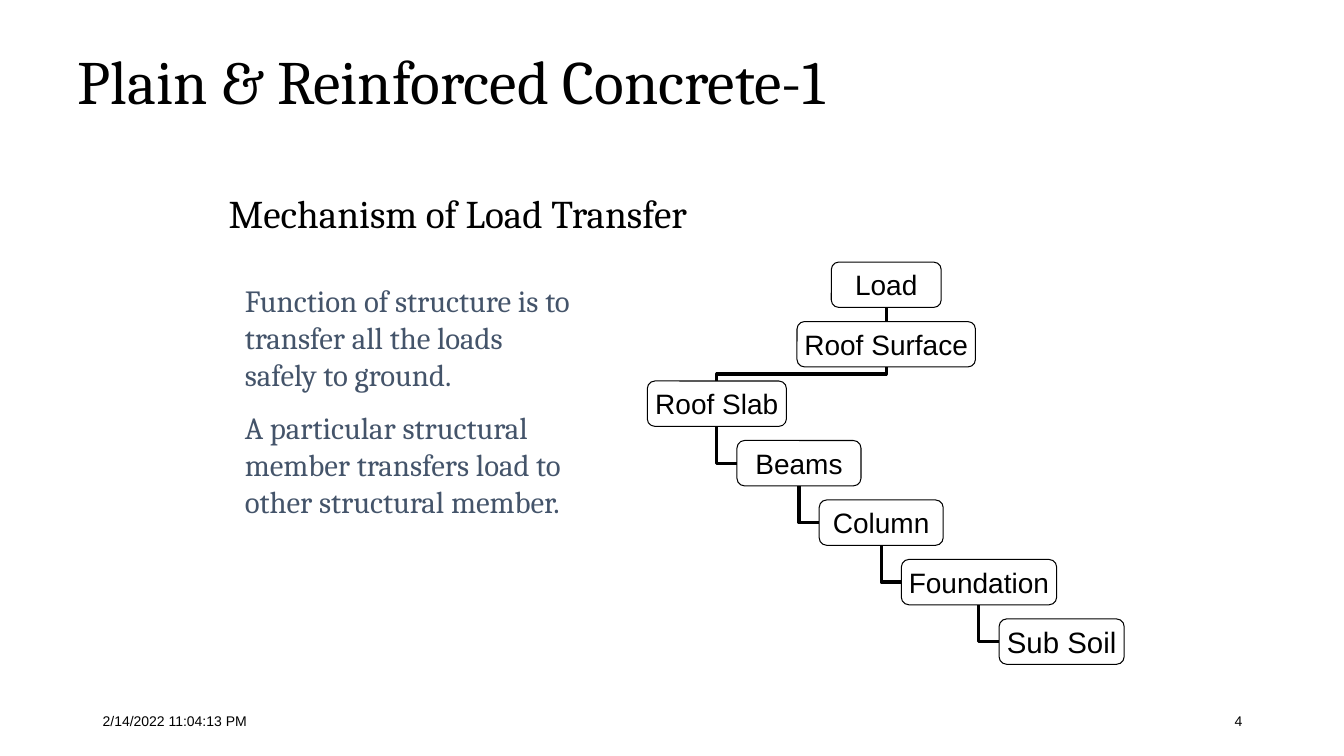
from dataclasses import dataclass
from lxml.etree import SubElement
from pptx import Presentation
from pptx.dml.color import RGBColor as RGB
from pptx.enum.shapes import MSO_CONNECTOR as CONN, MSO_SHAPE as SHAPE
from pptx.enum.text import MSO_ANCHOR as ANCHOR, PP_ALIGN as ALIGN
from pptx.oxml.ns import qn
from pptx.util import Inches as In, Pt


@dataclass(frozen=True)
class Theme:
    ink: RGB = RGB(0, 0, 0)
    slate: RGB = RGB(0x44, 0x54, 0x6A)
    serif: str = "Cambria"
    sans: str = "Arial"
    title: int = 44
    heading: int = 28
    body: int = 22
    node: int = 20
    last_node: int = 21
    footer: int = 10


T = Theme()


def write(sp, lines, font, size, color, align=ALIGN.LEFT, anchor=ANCHOR.TOP,
          wrap=True, before=0, spacing=1.0):
    """Fill a shape with paragraphs of one style."""
    tf = sp.text_frame
    tf.word_wrap, tf.vertical_anchor = wrap, anchor
    tf.text = "\n".join(lines)
    for p in tf.paragraphs:
        p.font.name, p.font.size, p.font.color.rgb = font, Pt(size), color
        p.alignment, p.line_spacing, p.space_before = align, spacing, Pt(before)


def link(s, kind, child, child_site, parent):
    """Glue a line from a side of the child to the bottom of the parent."""
    c = s.shapes.add_connector(kind, 0, 0, 0, 0)
    c.begin_connect(child, child_site)
    c.end_connect(parent, BOTTOM)
    c.line.color.rgb, c.line.width = T.ink, Pt(2.25)
    SubElement(c._element.spPr, qn("a:effectLst"))
    return c


prs = Presentation()
prs.slide_width, prs.slide_height = In(13.33), In(7.5)
s = prs.slides.add_slide(prs.slide_layouts[5])

# Title
title = s.shapes.title
title.left, title.top, title.width, title.height = In(0.67), In(0.13), In(11), In(1.42)
write(title, ["Plain & Reinforced Concrete-1"], T.serif, T.title, T.ink,
      anchor=ANCHOR.MIDDLE, spacing=0.9)

# Heading and explanation
heading = s.shapes.add_textbox(In(2.17), In(1.88), In(5.42), In(0.79))
write(heading, ["Mechanism of Load Transfer"], T.serif, T.heading, T.ink,
      before=10, spacing=0.9)
body = s.shapes.add_textbox(In(2.33), In(2.75), In(3.5), In(2.88))
write(body, ["Function of structure is to transfer all the loads safely to ground.",
             "A particular structural member transfers load to other structural member."],
      T.serif, T.body, T.slate, before=11)

# Load path: two centred boxes, then a staircase
TOP, LEFT, BOTTOM = 0, 1, 2
ROW_TOP, ROW_PITCH, BOX_H = 2.6, 0.59, 0.45
AXIS, SLAB_LEFT, STEP = 8.79, 6.42, 0.2
members = [("Load", 1.09), ("Roof Surface", 1.77), ("Roof Slab", 1.38), ("Beams", 1.23),
           ("Column", 1.23), ("Foundation", 1.54), ("Sub Soil", 1.24)]
boxes = []
x = SLAB_LEFT
for row, (name, width) in enumerate(members):
    left = AXIS - width / 2 if row < 2 else x
    sp = s.shapes.add_shape(SHAPE.ROUNDED_RECTANGLE, In(left), In(ROW_TOP + row * ROW_PITCH),
                            In(width), In(BOX_H))
    sp.shadow.inherit = False
    sp.fill.background()
    sp.line.color.rgb, sp.line.width = T.ink, Pt(0.75)
    tf = sp.text_frame
    tf.margin_left = tf.margin_right = In(0.05)
    tf.margin_top = tf.margin_bottom = In(0.03)
    size = T.last_node if row == len(members) - 1 else T.node
    write(sp, [name], T.sans, size, T.ink, ALIGN.CENTER, ANCHOR.MIDDLE, wrap=False)
    boxes.append(sp)
    if row >= 2:
        x += width / 2 + STEP

# Straight line from load to roof surface
load, surface, slab = boxes[:3]
link(s, CONN.STRAIGHT, surface, TOP, load)

# Two-bend line from roof surface to slab, turned upright
c = link(s, CONN.ELBOW, slab, TOP, surface)
mid_x, mid_y = c.left + c.width // 2, c.top + c.height // 2
c.width, c.height = c.height, c.width
c.left, c.top = mid_x - c.width // 2, mid_y - c.height // 2
xfrm = c._element.spPr.find(qn("a:xfrm"))
xfrm.set("rot", str(270 * 60000))
xfrm.set("flipV", "0")

# One-bend lines down the staircase
for parent, child in zip(boxes[2:], boxes[3:]):
    c = link(s, CONN.ELBOW, child, LEFT, parent)
    c._element.spPr.find(qn("a:prstGeom")).set("prst", "bentConnector2")

# Footer: date and slide number
for left, text, align in [(0.92, "2/14/2022 11:04:13 PM", ALIGN.LEFT), (9.42, "4", ALIGN.RIGHT)]:
    sp = s.shapes.add_textbox(In(left), In(6.95), In(3), In(0.4))
    write(sp, [text], T.sans, T.footer, T.ink, align, ANCHOR.MIDDLE)

prs.save("out.pptx")
